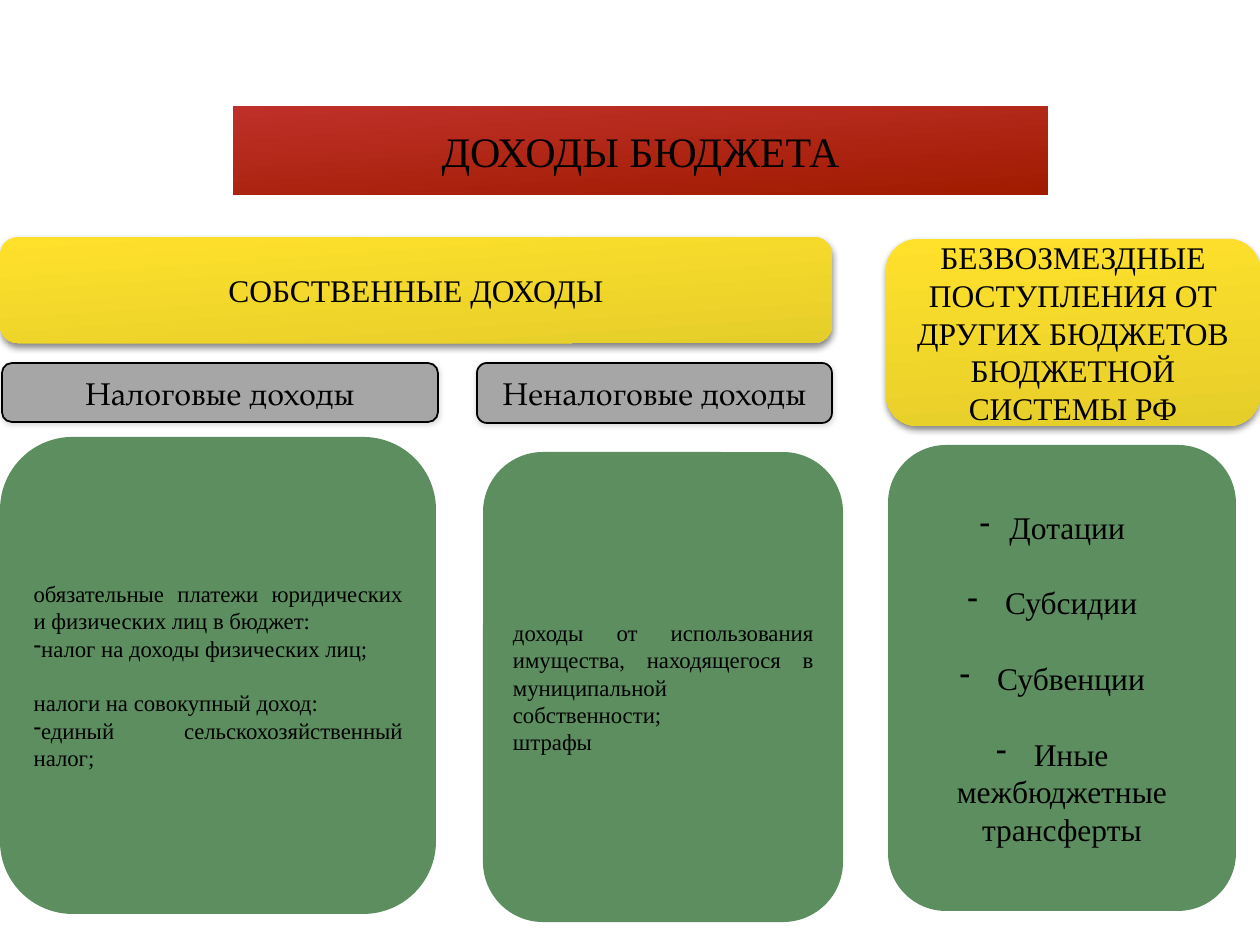
from lxml.etree import SubElement
from pptx import Presentation
from pptx.dml.color import RGBColor
from pptx.enum.shapes import MSO_SHAPE
from pptx.enum.text import MSO_ANCHOR, PP_ALIGN
from pptx.oxml.ns import qn
from pptx.util import Inches, Pt

BLACK = RGBColor(0x00, 0x00, 0x00)
GREY = RGBColor(0xA6, 0xA6, 0xA6)
GREEN = RGBColor(0x5C, 0x8E, 0x60)
RED = (RGBColor(0xBE, 0x30, 0x29), RGBColor(0xA0, 0x1B, 0x00))
YELLOW = (RGBColor(0xFF, 0xE1, 0x2B), RGBColor(0xE6, 0xCE, 0x2A))
SERIF, BOOK = "Times New Roman", "TeX Gyre Pagella"

PLAIN, BULLET, GAP_PLAIN, GAP_BULLET = (False, False), (True, False), (False, True), (True, True)

TITLE = ("ДОХОДЫ БЮДЖЕТА", (233, 106, 815, 89))
HEADERS = [
    ("СОБСТВЕННЫЕ ДОХОДЫ", (0, 237, 832, 106)),
    ("БЕЗВОЗМЕЗДНЫЕ ПОСТУПЛЕНИЯ ОТ ДРУГИХ БЮДЖЕТОВ БЮДЖЕТНОЙ СИСТЕМЫ РФ", (886, 239, 374, 187)),
]
SUBHEADERS = [
    ("Неналоговые доходы", (477, 363, 355, 60)),
    ("Налоговые доходы", (2, 363, 436, 59)),
]
DETAILS = [
    ((0, 437, 436, 477), 13, PP_ALIGN.JUSTIFY, [
        ("обязательные платежи юридических и физических лиц в бюджет:", PLAIN),
        ("налог на доходы физических лиц;", BULLET),
        ("налоги на совокупный доход:", GAP_PLAIN),
        ("единый сельскохозяйственный налог;", BULLET),
    ]),
    ((483, 452, 360, 470), 13, PP_ALIGN.JUSTIFY, [
        ("доходы от использования имущества, находящегося в муниципальной собственности;", PLAIN),
        ("штрафы", PLAIN),
    ]),
    ((888, 445, 348, 466), 18, PP_ALIGN.CENTER, [
        ("Дотации", BULLET),
        (" Субсидии", GAP_BULLET),
        (" Субвенции", GAP_BULLET),
        (" Иные межбюджетные трансферты", GAP_BULLET),
    ]),
]
HEADER_SHADOW = {"alpha": 48, "blur": 4, "distance": 2}
SUBHEADER_SHADOW = {"alpha": 15, "blur": 3, "distance": 1}
LINE_HEIGHT = 1.2


def px(length):
    return round(length * Inches(1) / 126)


def place(box, bounds):
    for name, length in zip(("left", "top", "width", "height"), bounds):
        setattr(box, name, px(length))


def paint(box, colours):
    if isinstance(colours, RGBColor):
        box.fill.solid()
        box.fill.fore_color.rgb = colours
        return
    box.fill.gradient()
    box.fill.gradient_angle = 360 - 86
    for stop, colour in zip(box.fill.gradient_stops, colours):
        stop.color.rgb = colour


def add_shadow(box, alpha, blur, distance):
    effects = box.element.spPr.find(qn("a:effectLst"))
    shadow = SubElement(effects, qn("a:outerShdw"), blurRad=str(Pt(blur)),
                        dist=str(Pt(distance)), dir="5400000", rotWithShape="0")
    colour = SubElement(shadow, qn("a:srgbClr"), val=str(BLACK))
    SubElement(colour, qn("a:alpha"), val=str(alpha * 1000))


def write(box, lines, size, font=SERIF, align=PP_ALIGN.CENTER):
    frame = box.text_frame
    frame.word_wrap = True
    frame.vertical_anchor = MSO_ANCHOR.MIDDLE
    for number, (text, (bullet, gap)) in enumerate(lines):
        para = frame.add_paragraph() if number else frame.paragraphs[0]
        spacing = Pt(size * LINE_HEIGHT) if gap else Pt(0)
        for name, value in {"alignment": align, "space_before": spacing}.items():
            setattr(para, name, value)
        if bullet:
            SubElement(para._p.get_or_add_pPr(), qn("a:buChar"), char="-")
        span = para.add_run()
        span.text = text
        for name, value in {"size": Pt(size), "name": font, "bold": False}.items():
            setattr(span.font, name, value)
        span.font.color.rgb = BLACK


def add_box(page, bounds, colours, outlined=False, shadow=None):
    box = page.shapes.add_shape(MSO_SHAPE.ROUNDED_RECTANGLE, *map(px, bounds))
    paint(box, colours)
    if outlined:
        box.line.color.rgb = BLACK
        box.line.width = Pt(1)
    else:
        box.line.fill.background()
    box.shadow.inherit = False
    if shadow:
        add_shadow(box, **shadow)
    return box


def main():
    deck = Presentation()
    deck.slide_width, deck.slide_height = Inches(10), Inches(7.5)
    page = deck.slides.add_slide(deck.slide_layouts[5])

    text, bounds = TITLE
    title = page.shapes.title
    place(title, bounds)
    SubElement(title.element.spPr, qn("a:prstGeom"), prst="roundRect")
    paint(title, RED)
    write(title, [(text, PLAIN)], 24)

    for text, bounds in HEADERS:
        box = add_box(page, bounds, YELLOW, shadow=HEADER_SHADOW)
        write(box, [(text, PLAIN)], 18)
    for text, bounds in SUBHEADERS:
        box = add_box(page, bounds, GREY, outlined=True, shadow=SUBHEADER_SHADOW)
        write(box, [(text, PLAIN)], 18, BOOK)
    for bounds, size, align, lines in DETAILS:
        write(add_box(page, bounds, GREEN), lines, size, align=align)

    deck.save("out.pptx")


if __name__ == "__main__":
    main()
